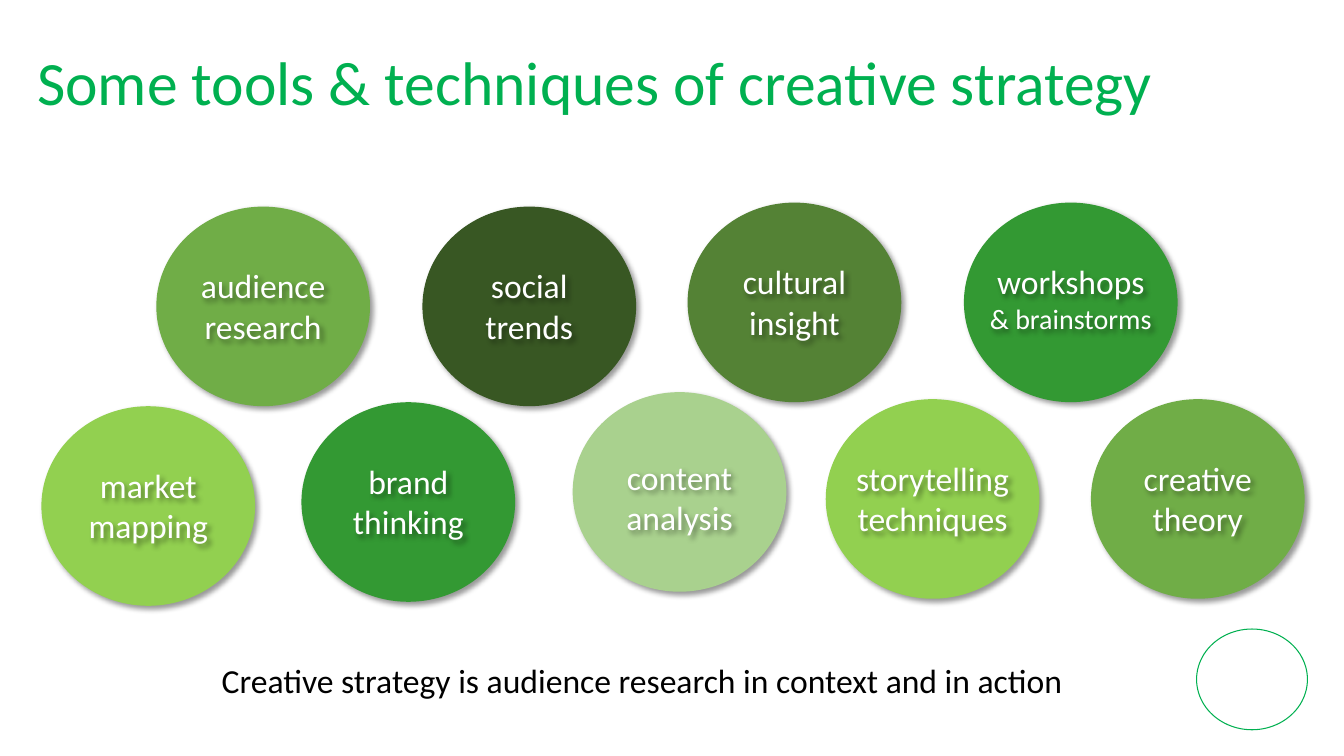
"""Build a slide of nine round labels for creative strategy tools."""
from dataclasses import dataclass
from lxml import etree
from pptx import Presentation, util as u
from pptx.dml.color import RGBColor
from pptx.enum import shapes, text
from pptx.oxml import ns


@dataclass(frozen=True)
class Theme:
    face: str = "Calibri"
    head: int = 44
    body: int = 24
    small: int = 20
    green: str = "00B050"
    white: str = "FFFFFF"
    black: str = "000000"
    leaf: str = "70AD47"
    lime: str = "92D050"
    pale: str = "A9D18E"
    moss: str = "548235"
    dark: str = "385723"
    vivid: str = "339933"


class Board:
    def __init__(self, deck, theme):
        self.theme = theme
        self.slide = deck.slides.add_slide(deck.slide_layouts[6])
        self.col = deck.slide_width / 100
        self.row = deck.slide_height / 100

    def place(self, x, y, w, h):
        return [round(n) for n in (x * self.col, y * self.row, w * self.col, h * self.row)]

    def shade(self, shape):
        shape.shadow.inherit = False
        list_ = shape._element.spPr.find(ns.qn("a:effectLst"))
        cast = etree.SubElement(list_, ns.qn("a:outerShdw"), blurRad=str(u.Pt(4)),
                                dist=str(u.Pt(3)), dir="2700000", algn="tl", rotWithShape="0")
        tint = etree.SubElement(cast, ns.qn("a:srgbClr"), val=self.theme.black)
        etree.SubElement(tint, ns.qn("a:alpha"), val="40000")

    def oval(self, box, fill=None, line=None):
        shape = self.slide.shapes.add_shape(shapes.MSO_SHAPE.OVAL, *self.place(*box))
        shape.shadow.inherit = False
        for part, tint in ((shape.fill, fill), (shape.line.fill, line)):
            if tint:
                part.solid()
                part.fore_color.rgb = RGBColor.from_string(tint)
            else:
                part.background()
        if line:
            shape.line.width = u.Pt(0.75)
        return shape

    def label(self, box, runs, tint, frame=None, para=None):
        shape = self.slide.shapes.add_textbox(*self.place(*box))
        body = shape.text_frame
        first = body.paragraphs[0]
        for part, form in ((body, {"word_wrap": True, **(frame or {})}), (first, para or {})):
            for key, val in form.items():
                setattr(part, key, val)
        for words, size in runs:
            run = first.add_run()
            run.text = words
            for key, val in {"name": self.theme.face, "size": u.Pt(size)}.items():
                setattr(run.font, key, val)
            run.font.color.rgb = RGBColor.from_string(tint)
        return shape

    def bubble(self, x, y, fill, runs, wide=13.73, drop=7.1):
        across, tall = 15.9, 26.4
        self.shade(self.oval((x, y, across, tall), fill))
        box = (x + (across - wide) / 2, y + drop, wide, 12.1)
        self.shade(self.label(box, runs, self.theme.white,
                              para={"alignment": text.PP_ALIGN.CENTER}))


def main():
    deck = Presentation()
    deck.slide_width, deck.slide_height = u.Inches(13.33), u.Inches(7.5)
    theme = Theme()
    board = Board(deck, theme)

    board.oval((89.03, 83.2, 8.25, 13.33), line=theme.green)
    board.label((2.03, 1.6, 86.27, 19.33),
                [("Some tools & techniques of creative strategy", theme.head)], theme.green,
                {"vertical_anchor": text.MSO_ANCHOR.MIDDLE}, {"line_spacing": 0.9})

    slim = {"wide": 11.55}
    tools = [
        (11.63, 27.33, theme.leaf, "audience research", slim),
        (31.43, 27.33, theme.dark, "social trends", slim),
        (51.16, 26.8, theme.moss, "cultural insight", {}),
        (71.72, 26.8, theme.vivid, "workshops ", {}),
        (3.08, 53.73, theme.lime, "market mapping", {}),
        (22.43, 53.2, theme.vivid, "brand thinking", {}),
        (42.61, 51.87, theme.pale, "content analysis", {**slim, "drop": 7.87}),
        (61.44, 52.8, theme.lime, "storytelling techniques", {}),
        (81.17, 52.8, theme.leaf, "creative theory", slim),
    ]
    extra = {"workshops ": [("& brainstorms", theme.small)]}
    for x, y, fill, words, form in tools:
        runs = [(words, theme.body)] + extra.get(words, [])
        board.bubble(x, y, fill, runs, **form)

    board.label((15.75, 86.67, 78.24, 6.67),
                [("Creative strategy is audience research in context and in action", theme.body)],
                theme.black)
    deck.save("out.pptx")


if __name__ == "__main__":
    main()
